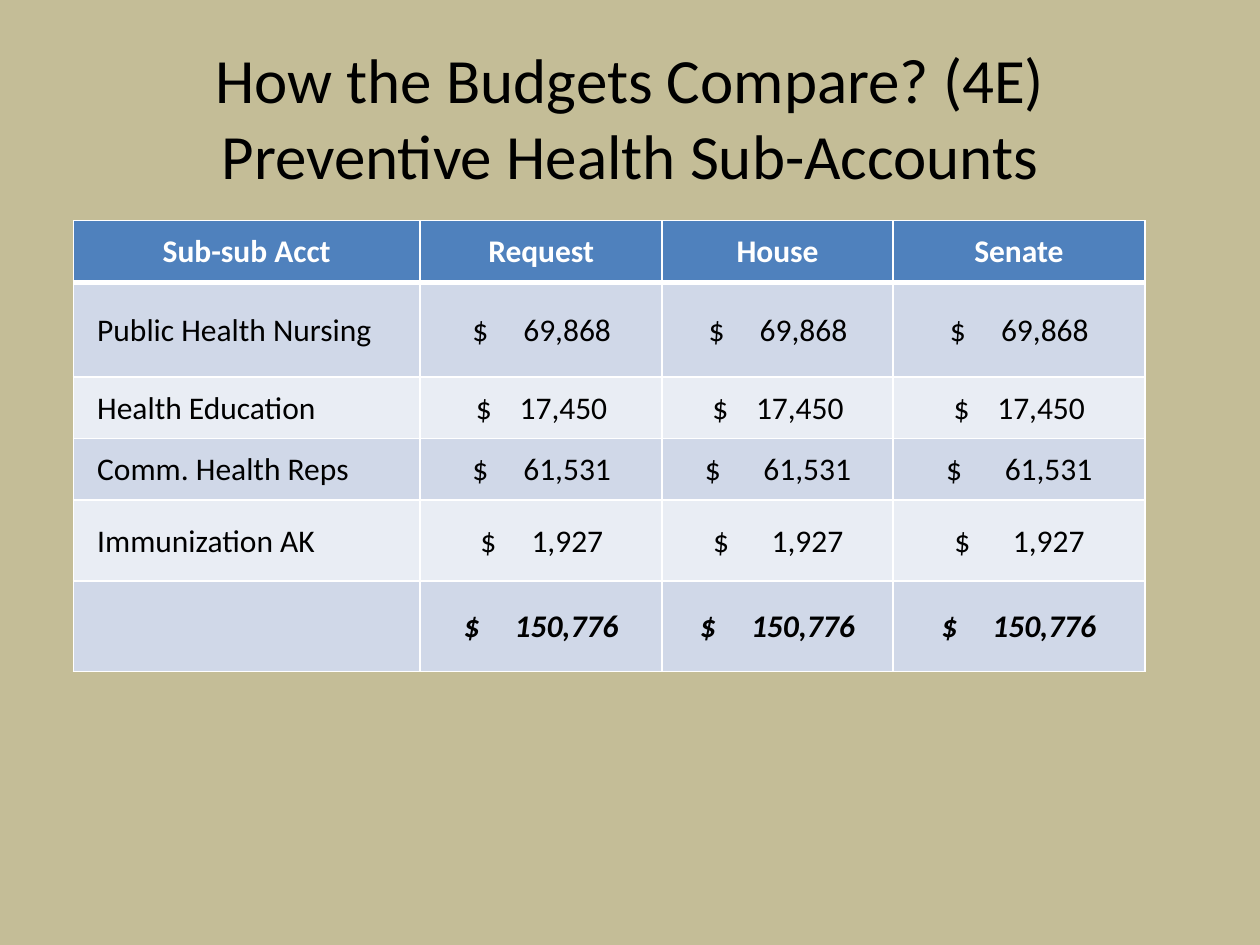
from lxml import etree
from pptx import Presentation
from pptx import util as u
from pptx.dml import color
from pptx.enum import text
from pptx.oxml import ns

COLUMN_WIDTHS = [6.99, 4.88, 4.65, 5.08]
ROW_HEIGHTS = [1.24, 1.91, 1.24, 1.24, 1.63, 1.83]
NARROW, NORMAL, WIDE = 0.88, 1.03, 1.18
AMOUNT_WIDTHS = {5: 1.42, 6: 1.75, 7: 2.1}
HEADINGS = ["Sub-sub Acct", "Request", "House", "Senate"]
ACCOUNTS = [
    ("Public Health Nursing", "69,868", [NORMAL] * 3),
    ("Health Education", "17,450", [NARROW] * 3),
    ("Comm. Health Reps", "61,531", [NORMAL, WIDE, WIDE]),
    ("Immunization AK", "1,927", [NORMAL, WIDE, WIDE]),
    ("", "150,776", [NORMAL] * 3),
]


def rgb(value):
    return color.RGBColor.from_string(value)


def assign(target, values):
    for name, value in values.items():
        setattr(target, name, value)


class BudgetSlide:
    font = "Calibri"
    ink, white, header = "000000", "FFFFFF", "4F81BD"
    bands = ["D0D8E8", "E9EDF4"]
    label_margins = (0.48, 0.03, 0.03, 0)
    amount_margins = (0.03, 0.03, 0.03, 0)
    header_margins = (0.13, 0.13, 0.13, 0.13)

    def __init__(self, deck, background):
        self.slide = deck.slides.add_slide(deck.slide_layouts[6])
        fill = self.slide.background.fill
        fill.solid()
        fill.fore_color.rgb = rgb(background)

    def wording(self, paragraph, words, size, ink, align, bold=False, italic=False):
        paragraph.text = words
        paragraph.alignment = align
        assign(paragraph.font, {"name": self.font, "size": u.Pt(size),
                                "bold": bold, "italic": italic})
        paragraph.font.color.rgb = rgb(ink)

    def title(self, words, left, top, width, height):
        box = self.slide.shapes.add_textbox(*map(u.Cm, (left, top, width, height)))
        assign(box.text_frame, {"word_wrap": True,
                                "vertical_anchor": text.MSO_ANCHOR.MIDDLE})
        self.wording(box.text_frame.paragraphs[0], words, 36, self.ink,
                     text.PP_ALIGN.CENTER)

    def table(self, left, top, widths, heights):
        frame = self.slide.shapes.add_table(
            len(heights), len(widths),
            *map(u.Cm, (left, top, sum(widths), sum(heights))))
        grid = frame.table
        grid.horz_banding = False
        for column, width in zip(grid.columns, widths):
            column.width = u.Cm(width)
        for row, height in zip(grid.rows, heights):
            row.height = u.Cm(height)
        return grid

    def cell(self, cell, fill, margins, top_line=1, bottom_line=1):
        sides = ("margin_left", "margin_top", "margin_right", "margin_bottom")
        assign(cell, dict(zip(sides, map(u.Cm, margins))))
        cell.vertical_anchor = text.MSO_ANCHOR.MIDDLE
        cell.fill.solid()
        cell.fill.fore_color.rgb = rgb(fill)
        properties = cell._tc.get_or_add_tcPr()
        lines = {"a:lnL": 1, "a:lnR": 1, "a:lnT": top_line, "a:lnB": bottom_line}
        for position, (tag, width) in enumerate(lines.items()):
            line = etree.Element(ns.qn(tag), w=str(u.Pt(width)))
            paint = etree.SubElement(line, ns.qn("a:solidFill"))
            etree.SubElement(paint, ns.qn("a:srgbClr"), val=self.white)
            properties.insert(position, line)

    def heading(self, cell, words):
        self.cell(cell, self.header, self.header_margins, bottom_line=3)
        self.wording(cell.text_frame.paragraphs[0], words, 18, self.white,
                     text.PP_ALIGN.CENTER, bold=True)

    def label(self, cell, words, fill, top_line):
        self.cell(cell, fill, self.label_margins, top_line)
        self.wording(cell.text_frame.paragraphs[0], words, 18, self.ink,
                     text.PP_ALIGN.LEFT)

    def amount(self, cell, amount, gap, width, fill, top_line, total):
        self.cell(cell, fill, self.amount_margins, top_line)
        paragraph = cell.text_frame.paragraphs[0]
        self.wording(paragraph, f"$\t{amount}", 18, self.ink, text.PP_ALIGN.LEFT,
                     bold=total, italic=total)
        start = (width - gap - AMOUNT_WIDTHS[len(amount)]) / 2 - self.amount_margins[0]
        properties = paragraph._p.get_or_add_pPr()
        properties.set("marL", str(u.Cm(start + gap)))
        properties.set("indent", str(u.Cm(-gap)))


def main():
    deck = Presentation()
    assign(deck, {"slide_width": u.Cm(25.4), "slide_height": u.Cm(19.05)})
    page = BudgetSlide(deck, "C4BD97")
    page.title("How the Budgets Compare? (4E)\vPreventive Health Sub-Accounts",
               1.27, 0.76, 22.86, 3.18)
    budgets = page.table(1.48, 4.45, COLUMN_WIDTHS, ROW_HEIGHTS)
    for column, heading in enumerate(HEADINGS):
        page.heading(budgets.cell(0, column), heading)
    for row, (account, amount, gaps) in enumerate(ACCOUNTS, 1):
        fill = page.bands[(row - 1) % 2]
        top_line = 3 if row == 1 else 1
        page.label(budgets.cell(row, 0), account, fill, top_line)
        for column, gap in enumerate(gaps, 1):
            page.amount(budgets.cell(row, column), amount, gap,
                        COLUMN_WIDTHS[column], fill, top_line,
                        total=row == len(ACCOUNTS))
    deck.save("out.pptx")


if __name__ == "__main__":
    main()
